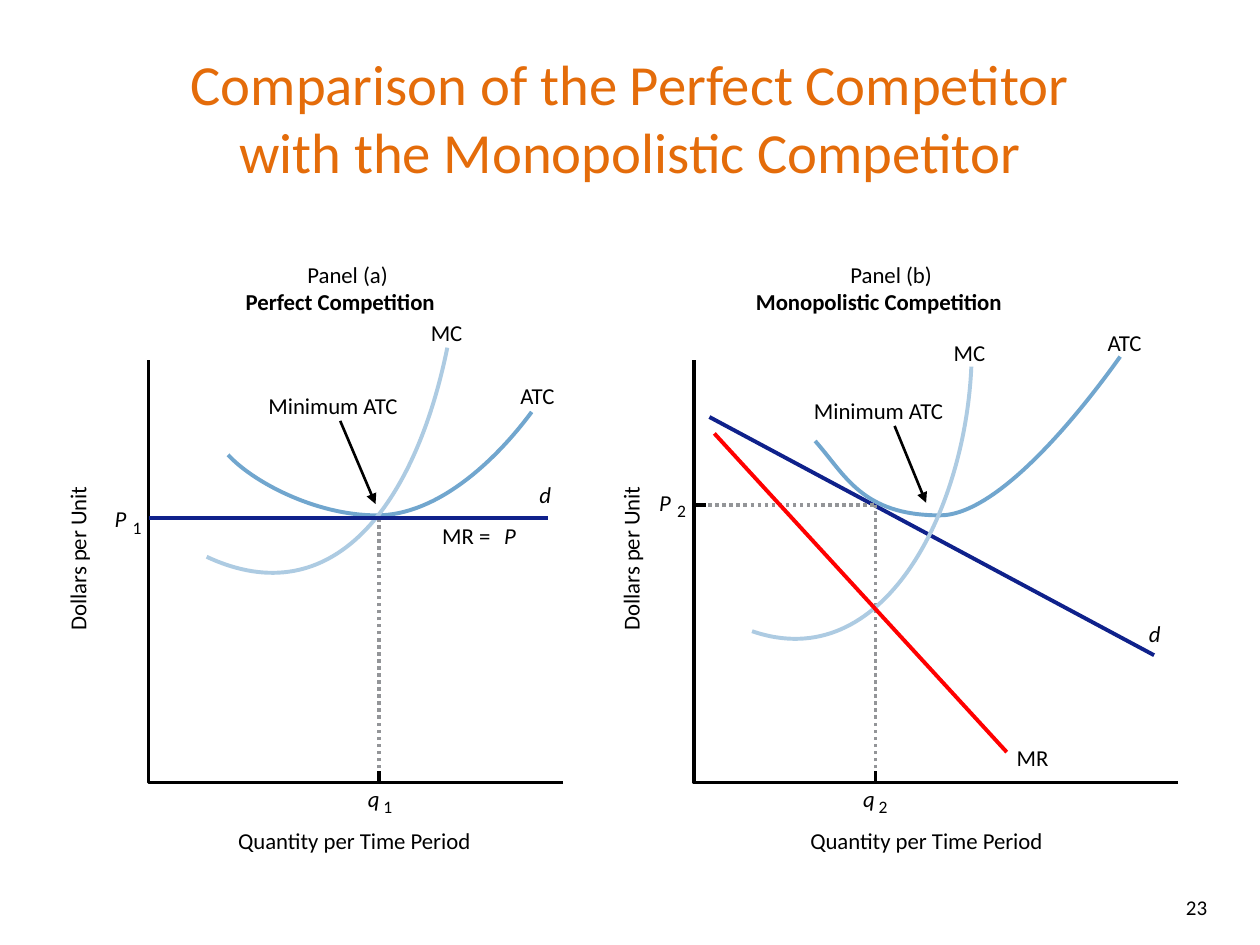
from lxml.etree import SubElement
from pptx import Presentation
from pptx.dml.color import RGBColor
from pptx.enum.dml import MSO_LINE
from pptx.enum.text import MSO_ANCHOR, MSO_AUTO_SIZE, PP_ALIGN
from pptx.oxml.ns import qn
from pptx.util import Pt

FONT = "Calibri"
BLACK, ORANGE, GREY = "000000", "E46C0A", "939598"
DEMAND, ATC, MC, MR = "0F218B", "71A6CE", "ADCBE2", "FF0000"
AXIS_TOP, AXIS_BASE, TICK = 205.9, 447.1, 6.5


def color(hex_code):
    return RGBColor.from_string(hex_code)


def style_text(frame, size, hex_code=BLACK, bold=False, italic=False, align=None):
    for paragraph in frame.paragraphs:
        paragraph.alignment = align
        for run in paragraph.runs:
            font = run.font
            font.name, font.size = FONT, Pt(size)
            font.bold, font.italic = bold, italic
            font.color.rgb = color(hex_code)


def add_block(slide, text, left, top, width, height, size, hex_code, align):
    """Text in a fixed frame, centred vertically."""
    frame = slide.shapes.add_textbox(Pt(left), Pt(top), Pt(width), Pt(height)).text_frame
    frame.word_wrap = True
    frame.vertical_anchor = MSO_ANCHOR.MIDDLE
    frame.text = text
    style_text(frame, size, hex_code, align=align)


def add_label(slide, text, left, top, width, size=13, bold=False, italic=False, rotation=0):
    """One-line label without margins."""
    box = slide.shapes.add_textbox(Pt(left), Pt(top), Pt(width), Pt(size * 1.22))
    box.rotation = rotation
    frame = box.text_frame
    frame.margin_left = frame.margin_right = frame.margin_top = frame.margin_bottom = 0
    frame.word_wrap = False
    frame.auto_size = MSO_AUTO_SIZE.SHAPE_TO_FIT_TEXT
    frame.text = text
    style_text(frame, size, bold=bold, italic=italic)


def add_symbol(slide, letter, index, left, top):
    """Italic variable with a lowered index."""
    width = {"P": 8.6, "q": 7.2}[letter]
    add_label(slide, letter, left, top, width, italic=True)
    add_label(slide, index, left + width + 1.7, top + 6.5, 5.8, size=10)


def add_line(slide, start, end, hex_code, weight, dotted=False, arrow=False):
    line = slide.shapes.add_connector(1, *map(Pt, start + end))
    line.line.color.rgb = color(hex_code)
    line.line.width = Pt(weight)
    if dotted:
        line.line.dash_style = MSO_LINE.ROUND_DOT
    properties = line._element.spPr
    if arrow:
        SubElement(properties.find(qn("a:ln")), qn("a:tailEnd"), type="triangle")
    SubElement(properties, qn("a:effectLst"))


def add_outline(slide, points, hex_code, weight):
    """Open path through the points."""
    start, *rest = [(Pt(x), Pt(y)) for x, y in points]
    builder = slide.shapes.build_freeform(*start, scale=1.0)
    builder.add_line_segments(rest, close=False)
    outline = builder.convert_to_shape()
    outline.shadow.inherit = False
    outline.fill.background()
    outline.line.color.rgb = color(hex_code)
    outline.line.width = Pt(weight)
    return outline


def add_curve(slide, points, hex_code):
    """Bezier curve: a start, then two control points and an end per segment."""
    curve = add_outline(slide, points, hex_code, 2.25)
    path = next(curve._element.iter(qn("a:path")))
    steps = path.findall(qn("a:lnTo"))
    for first in range(0, len(steps), 3):
        bezier = SubElement(path, qn("a:cubicBezTo"))
        for step in steps[first:first + 3]:
            bezier.append(step[0])
            path.remove(step)


def add_axes(slide, left, right):
    add_outline(slide, [(right, AXIS_BASE), (left, AXIS_BASE), (left, AXIS_TOP)], BLACK, 2)


def add_quantity_guide(slide, x, top):
    add_line(slide, (x, AXIS_BASE), (x, top), GREY, 2, dotted=True)
    add_line(slide, (x, AXIS_BASE), (x, AXIS_BASE - TICK), BLACK, 2)


def add_captions(slide, panel, panel_left, market, market_left, market_width,
                 quantity_left, dollars_left):
    add_label(slide, panel, panel_left, 149, 52.6)
    add_label(slide, market, market_left, 164.2, market_width, bold=True)
    add_label(slide, "Quantity per Time Period", quantity_left, 472.3, 144.7)
    add_label(slide, "Dollars per Unit", dollars_left, 307.4, 90, rotation=270)


def add_perfect_competition(slide):
    add_captions(slide, "Panel (a)", 175.7, "Perfect Competition", 140.4, 123.8, 136.1, -0.7)
    add_axes(slide, 85, 321.8)
    add_quantity_guide(slide, 216.7, 295.9)
    add_symbol(slide, "q", "1", 210.2, 448.6)

    # Cost curves
    add_curve(slide, [(130.3, 259.9), (144, 275), (180, 294.5), (215.3, 294.5),
                      (249.8, 294.5), (283, 263.5), (303.8, 235.4)], ATC)
    add_label(slide, "ATC", 297.4, 218.2, 25.9)
    add_line(slide, (194.4, 240.5), (214.6, 288), BLACK, 1.5, arrow=True)
    add_label(slide, "Minimum ATC", 153.4, 223.9, 82.8)
    add_curve(slide, [(118.1, 318.2), (190.8, 352.1), (237.6, 287.3), (255.6, 198.7)], MC)
    add_label(slide, "MC", 246.2, 182.2, 20.2)

    # Flat demand at the market price
    add_line(slide, (85, 295.9), (313.2, 295.9), DEMAND, 2.25)
    add_label(slide, "d", 308.2, 275, 7.2, italic=True)
    add_symbol(slide, "P", "1", 65.5, 288.7)
    add_label(slide, "MR =", 252.7, 298.1, 35.3)
    add_label(slide, "P", 288, 298.1, 8.6, italic=True)


def add_monopolistic_competition(slide):
    add_captions(slide, "Panel (b)", 486, "Monopolistic Competition", 432, 160.6, 463, 315.4)
    add_axes(slide, 396.7, 673.2)

    # Falling demand and the chosen price and quantity
    add_line(slide, (405.4, 238.3), (659.5, 374.4), DEMAND, 2.25)
    add_label(slide, "d", 656.6, 354.2, 7.2, italic=True)
    add_line(slide, (396.7, 288.7), (501.1, 288.7), GREY, 2, dotted=True)
    add_line(slide, (396.7, 288.7), (396.7 + TICK, 288.7), BLACK, 2)
    add_quantity_guide(slide, 500.4, 288.7)
    add_symbol(slide, "q", "2", 493.2, 448.6)
    add_symbol(slide, "P", "2", 376.6, 279.4)

    # Cost curves
    add_curve(slide, [(465.8, 252), (483.1, 271.4), (492.5, 294.5), (537.1, 294.5),
                      (571, 294.5), (619.2, 233.3), (640.1, 203.8)], ATC)
    add_label(slide, "ATC", 632.9, 187.9, 25.9)
    add_line(slide, (511.2, 243.4), (529.2, 287.3), BLACK, 1.5, arrow=True)
    add_label(slide, "Minimum ATC", 465.1, 226.8, 82.8)
    add_curve(slide, [(429.8, 360.7), (504.7, 386.6), (551.5, 292.3), (555.1, 209.5)], MC)
    add_label(slide, "MC", 545, 193.7, 20.2)

    # Marginal revenue
    add_line(slide, (408.2, 247.7), (575.3, 429.8), MR, 2.25)
    add_label(slide, "MR", 581, 424.8, 20.2)


def main():
    deck = Presentation()
    deck.slide_width, deck.slide_height = Pt(720), Pt(540)
    slide = deck.slides.add_slide(deck.slide_layouts[6])

    # Title and page number
    add_block(slide, "Comparison of the Perfect Competitor\vwith the Monopolistic Competitor",
              36, 21.6, 648, 90, 32.4, ORANGE, PP_ALIGN.CENTER)
    add_block(slide, "23", 414.7, 504, 282.2, 28.8, 12, BLACK, PP_ALIGN.RIGHT)

    add_perfect_competition(slide)
    add_monopolistic_competition(slide)
    deck.save("out.pptx")


if __name__ == "__main__":
    main()
